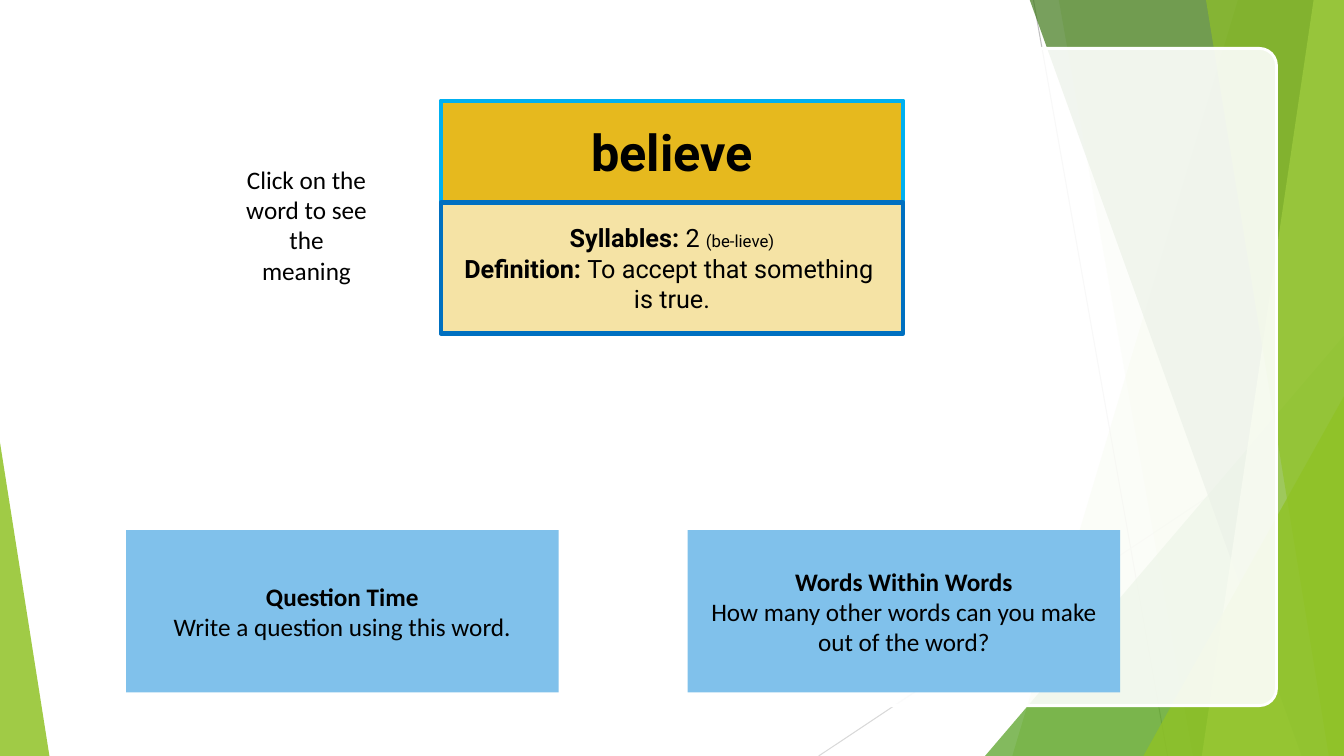
"""Build the vocabulary slide for the word "believe"."""
from lxml import etree
from pptx import Presentation
from pptx.dml.color import RGBColor
from pptx.enum.shapes import MSO_CONNECTOR, MSO_SHAPE
from pptx.enum.text import MSO_ANCHOR, MSO_AUTO_SIZE, PP_ALIGN
from pptx.oxml.ns import qn
from pptx.util import Inches, Pt

STRAIGHT = MSO_CONNECTOR.STRAIGHT
RECT, ROUNDED = MSO_SHAPE.RECTANGLE, MSO_SHAPE.ROUNDED_RECTANGLE
TRIANGLE = MSO_SHAPE.ISOSCELES_TRIANGLE
MIDDLE, TOP, CENTER = MSO_ANCHOR.MIDDLE, MSO_ANCHOR.TOP, PP_ALIGN.CENTER
GROW = MSO_AUTO_SIZE.SHAPE_TO_FIT_TEXT

THEME = {
    "white": "FFFFFF", "black": "000000",
    "grey": "BFBFBF", "light_grey": "D9D9D9",
    "green": "90C226", "mid_green": "54A021", "dark_green": "3F7819", "lime": "C0E474",
    "gold": "E6B91E", "cream": "F5E3A5", "sky": "80C1EB",
    "cyan": "00B0F0", "blue": "0070C0",
    "body": "Calibri", "word": "Roboto",
    "large": 36, "normal": 18, "small": 12,
}


def paint(sp, fill, alpha=100, line=None, width=0):
    """Set the fill, its opacity in percent, and the outline of a shape."""
    sp.shadow.inherit = False
    sp.fill.solid()
    sp.fill.fore_color.rgb = RGBColor.from_string(THEME[fill])
    if alpha < 100:
        clr = sp._element.spPr.find(qn("a:solidFill")).find(qn("a:srgbClr"))
        etree.SubElement(clr, qn("a:alpha"), val=str(alpha * 1000))
    if line:
        sp.line.color.rgb = RGBColor.from_string(THEME[line])
        sp.line.width = Pt(width)
    else:
        sp.line.fill.background()


def write(sp, font, paragraphs, anchor=MIDDLE):
    """Write centred paragraphs of (text, bold, size) runs."""
    tf = sp.text_frame
    tf.word_wrap = True
    tf.vertical_anchor = anchor
    for i, runs in enumerate(paragraphs):
        p = tf.add_paragraph() if i else tf.paragraphs[0]
        p.alignment = CENTER
        for text, bold, size in runs:
            for j, part in enumerate(text.split("\n")):
                if j:
                    p.add_line_break()
                r = p.add_run()
                r.text = part
                r.font.color.rgb = RGBColor.from_string(THEME["black"])
                style = {"name": THEME[font], "size": Pt(THEME[size]), "bold": bold}
                for key, value in style.items():
                    setattr(r.font, key, value)


prs = Presentation()
prs.slide_width, prs.slide_height = Inches(13.33), Inches(7.5)
s = prs.slides.add_slide(prs.slide_layouts[6])

for ends, color in [((10.25, 0, 11.58, 7.5), "grey"), ((13.33, 4.03, 8.12, 7.5), "light_grey")]:
    cxn = s.shapes.add_connector(STRAIGHT, *map(Inches, ends))
    cxn.line.color.rgb = RGBColor.from_string(THEME[color])
    cxn.line.width = Pt(0.75)
    etree.SubElement(cxn._element.spPr, qn("a:effectLst"))

# Bands give top and bottom x; triangles give left, top, width, height and apex.
facets = [
    ((12.28, 10.04), "green", 30),
    ((10.5, 11.83), "green", 20),
    ((9.77, 3.33, 3.56, 4.17, 1), "mid_green", 72),
    ((10.21, 12.91), "dark_green", 70),
    ((13.03, 11.92), "lime", 70),
    ((11.96, 13.18), "green", 65),
    ((11.34, 3.93, 1.99, 3.57, 1), "green", 80),
    ((0, 4.39, 0.49, 3.11, 0), "green", 85),
]
for geometry, color, alpha in facets:
    if len(geometry) == 2:
        top_x, bottom_x = map(Inches, geometry)
        top, right, bottom = Inches(-0.01), prs.slide_width, prs.slide_height
        band = s.shapes.build_freeform(top_x, top)
        band.add_line_segments([(right, top), (right, bottom), (bottom_x, bottom)])
        sp = band.convert_to_shape()
    else:
        sp = s.shapes.add_shape(TRIANGLE, *map(Inches, geometry[:4]))
        sp.adjustments[0] = geometry[4]
    paint(sp, color, alpha)

panel = s.shapes.add_shape(ROUNDED, Inches(0.67), Inches(0.48), Inches(11.99), Inches(6.52))
panel.adjustments[0] = 0.026
paint(panel, "white", 90, "white", 2)

hint = s.shapes.add_textbox(Inches(2.32), Inches(1.58), Inches(1.44), Inches(1.31))
write(hint, "body", [[("Click on the word to see the meaning", False, "normal")]], TOP)
hint.text_frame.auto_size = GROW

cards = [
    ((4.37, 1, 4.59, 1.01), "gold", "cyan", "word", [[("believe", True, "large")]]),
    ((4.37, 2.01, 4.59, 1.3), "cream", "blue", "word", [
        [("Syllables: ", True, "normal"), ("2 ", False, "normal"), ("(be-lieve)", False, "small")],
        [("Definition: ", True, "normal"),
         ("To accept that something \nis true.", False, "normal")]]),
    ((1.25, 5.26, 4.29, 1.61), "sky", None, "body", [
        [("Question Time", True, "normal")],
        [("Write a question using this word.", False, "normal")]]),
    ((6.82, 5.26, 4.29, 1.61), "sky", None, "body", [
        [("Words Within Words", True, "normal")],
        [("How many other words can you make out of the word?", False, "normal")]]),
]
for box, fill, line, font, paragraphs in cards:
    sp = s.shapes.add_shape(RECT, *map(Inches, box))
    paint(sp, fill, line=line, width=3)
    write(sp, font, paragraphs)

prs.save("out.pptx")
